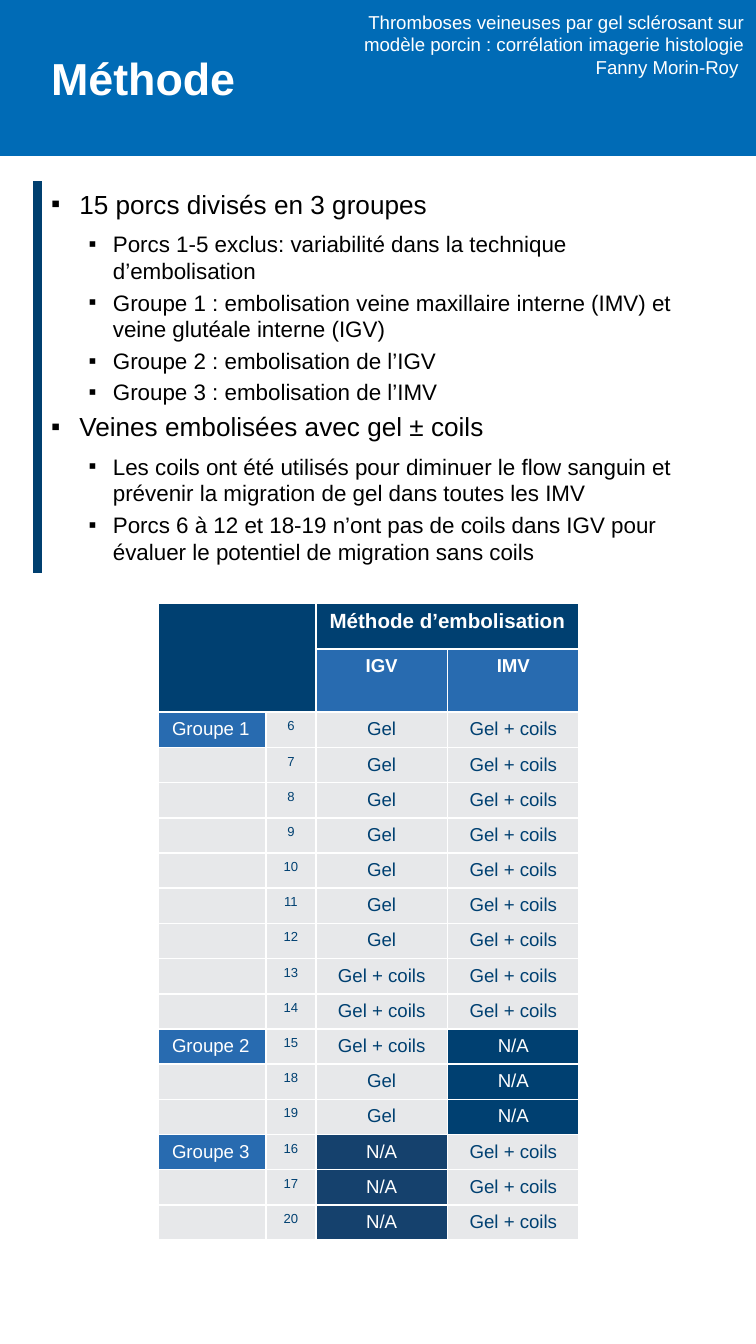
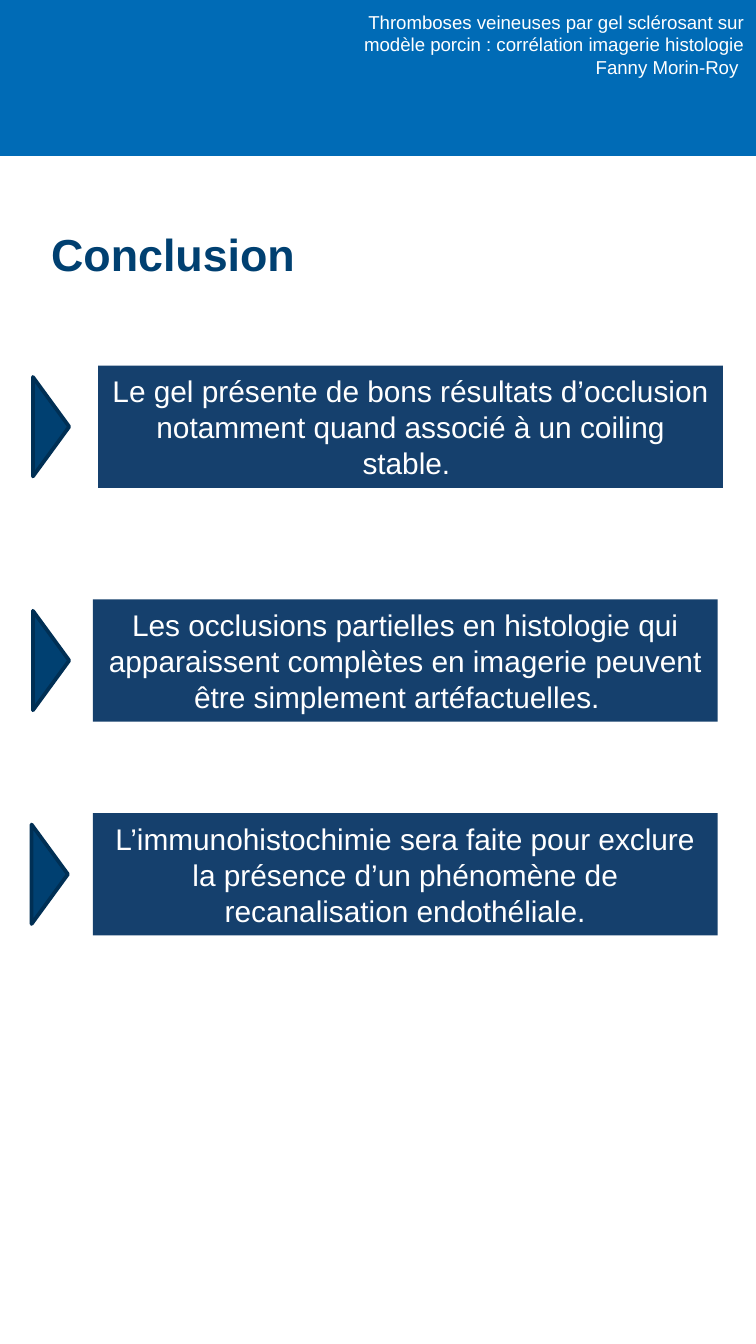
from pptx import Presentation
from pptx.dml.color import RGBColor as Rgb
from pptx.enum.shapes import MSO_CONNECTOR as Conn, MSO_SHAPE as Shape
from pptx.enum.text import MSO_ANCHOR as Anchor, MSO_AUTO_SIZE as Fit, PP_ALIGN as Align
from pptx.oxml import parse_xml
from pptx.oxml.ns import nsdecls
from pptx.util import Inches, Pt
from lxml.etree import SubElement

HEX = {
    "white": "FFFFFF", "black": "000000", "band": "006BB6", "navy": "004071",
    "rule": "003F6F", "edge": "002F54", "box": "15406D", "none": "15416D",
    "blue": "286BB0", "grey": "E7E8EA",
}
FONT = "Arial"
HIGH = 10
WIDE = HIGH * 9 / 16

HEAD = [
    "Thromboses veineuses par gel sclérosant sur modèle porcin : corrélation imagerie histologie",
    "Fanny Morin-Roy ",
]
POINTS = [
    (0, "15 porcs divisés en 3 groupes"),
    (1, "Porcs 1-5 exclus: variabilité dans la technique d’embolisation"),
    (1, "Groupe 1 : embolisation veine maxillaire interne (IMV) et veine glutéale interne (IGV)"),
    (1, "Groupe 2 : embolisation de l’IGV"),
    (1, "Groupe 3 : embolisation de l’IMV"),
    (0, "Veines embolisées avec gel ± coils"),
    (1, "Les coils ont été utilisés pour diminuer le flow sanguin et prévenir la migration de gel dans toutes les IMV"),
    (1, "Porcs 6 à 12 et 18-19 n’ont pas de coils dans IGV pour évaluer le potentiel de migration sans coils"),
]
LEVELS = [
    {"size": 14, "left": 0.21, "hang": -0.21, "after": 3.4},
    {"size": 12, "left": 0.46, "hang": -0.18, "after": 0},
]
GEL, BOTH, NA = "Gel", "Gel + coils", "N/A"
PIGS = [
    ("Groupe 1", range(6, 13), GEL, BOTH),
    ("", (13, 14), BOTH, BOTH),
    ("Groupe 2", (15,), BOTH, NA),
    ("", (18, 19), GEL, NA),
    ("Groupe 3", (16, 17, 20), NA, BOTH),
]
COLS = [0.8, 0.37, 0.98, 0.98]
TOPS = [0.34, 0.47]
ROWS = 3.93
CLAIMS = [
    (0.73, 2.72, 0.01, "Le gel présente de bons résultats d’occlusion notamment quand associé à un coiling stable. "),
    (0.69, 4.46, 0.01, "Les occlusions partielles en histologie qui apparaissent complètes en imagerie peuvent être simplement artéfactuelles.  "),
    (0.69, 6.05, 0, "L’immunohistochimie sera faite pour exclure la présence d’un phénomène de recanalisation endothéliale."),
]
CLAIM = (4.65, 0.91)
ARROW = (0.74, 0.27)


def tint(name):
    return Rgb.from_string(HEX[name])


def place(part, *box):
    for key, val in zip(("left", "top", "width", "height"), box):
        setattr(part, key, Inches(val))


def write(par, text, size, color, bold=False, align=Align.LEFT):
    par.alignment = align
    run = par.add_run()
    run.text = text
    for key, val in {"name": FONT, "size": Pt(size), "bold": bold}.items():
        setattr(run.font, key, val)
    run.font.color.rgb = tint(color)


def setup(frame, anchor=Anchor.TOP, fit=Fit.NONE):
    form = {"word_wrap": True, "auto_size": fit, "vertical_anchor": anchor}
    for key, val in form.items():
        setattr(frame, key, val)
    return frame


def block(slide, kind, box, fill, edge=None):
    part = slide.shapes.add_shape(kind, *map(Inches, box))
    part.shadow.inherit = False
    part.fill.solid()
    part.fill.fore_color.rgb = tint(fill)
    if edge:
        part.line.color.rgb = tint(edge)
        part.line.width = Pt(2)
    else:
        part.line.fill.background()
    return part


def start(deck, layout, title, color, box):
    slide = deck.slides.add_slide(deck.slide_layouts[layout])
    name = slide.shapes.title
    place(name, *box)
    write(setup(name.text_frame).paragraphs[0], title, 24, color, True)
    return slide


def header(slide):
    box = slide.shapes.add_textbox(*map(Inches, (2.58, 0.03, 3.05, 0.65)))
    frame = setup(box.text_frame)
    for i, text in enumerate(HEAD):
        par = frame.add_paragraph() if i else frame.paragraphs[0]
        write(par, text, 10, "white", align=Align.RIGHT)


def bullets(body):
    place(body, 0.28, 1.35, 5.06, 3.03)
    frame = setup(body.text_frame)
    for i, (level, text) in enumerate(POINTS):
        par = frame.add_paragraph() if i else frame.paragraphs[0]
        form = LEVELS[level]
        par.level = level
        props = par._p.get_or_add_pPr()
        props.set("marL", str(Inches(form["left"])))
        props.set("indent", str(Inches(form["hang"])))
        props.append(parse_xml(f'<a:buChar {nsdecls("a")} char="▪"/>'))
        par.space_before = Pt(form["size"] * 0.2 if i else 0)
        par.space_after = Pt(form["after"])
        write(par, text, form["size"], "black")


def cell_set(cell, fill, text="", size=10, color="navy", bold=False, align=Align.CENTER):
    cell.fill.solid()
    cell.fill.fore_color.rgb = tint(fill)
    cell.margin_bottom = Inches(0.04)
    props = cell._tc.get_or_add_tcPr()
    for i, side in enumerate("LRTB"):
        props.insert(i, parse_xml(
            f'<a:ln{side} {nsdecls("a")} w="12700"><a:solidFill>'
            f'<a:srgbClr val="{HEX["white"]}"/></a:solidFill></a:ln{side}>'))
    par = cell.text_frame.paragraphs[0]
    if text:
        write(par, text, size, color, bold, align)
    else:
        par._p.append(parse_xml(f'<a:endParaRPr {nsdecls("a")} sz="{size * 100}"/>'))


def grid(slide):
    rows = [(name if i == 0 else "", str(pig), igv, imv)
            for name, pigs, igv, imv in PIGS for i, pig in enumerate(pigs)]
    highs = TOPS + [ROWS / len(rows)] * len(rows)
    box = (1.18, 4.49, sum(COLS), sum(highs))
    table = slide.shapes.add_table(len(highs), len(COLS), *map(Inches, box)).table
    table.first_row = table.horz_banding = False
    for col, wide in zip(table.columns, COLS):
        col.width = Inches(wide)
    for row, high in zip(table.rows, highs):
        row.height = Inches(high)
    tops = [["", "", "Méthode d’embolisation", ""], ["", "", "IGV", "IMV"]]
    for r, line in enumerate(tops):
        for c, text in enumerate(line):
            fill = "blue" if r and c > 1 else "navy"
            cell_set(table.cell(r, c), fill, text, 10 if r else 11, "white", True)
    table.cell(0, 0).merge(table.cell(1, 1))
    table.cell(0, 2).merge(table.cell(0, 3))
    for r, (name, pig, *veins) in enumerate(rows, len(TOPS)):
        cell_set(table.cell(r, 0), "blue" if name else "grey", name, 10, "white", align=Align.LEFT)
        cell_set(table.cell(r, 1), "grey", pig, 7)
        for c, (text, dark) in enumerate(zip(veins, ("none", "navy")), 2):
            void = text == NA
            cell_set(table.cell(r, c), dark if void else "grey", text, 10, "white" if void else "navy")


def rule(slide):
    line = slide.shapes.add_connector(Conn.STRAIGHT, *map(Inches, (0.28, 1.35, 0.28, 4.26)))
    line.line.color.rgb = tint("rule")
    line.line.width = Pt(4.5)
    SubElement(line._element.spPr, "{http://schemas.openxmlformats.org/drawingml/2006/main}effectLst")


def claims(slide):
    for left, top, tip, text in CLAIMS:
        mid = top + (CLAIM[1] - ARROW[1]) / 2
        arrow = block(slide, Shape.ISOSCELES_TRIANGLE, (tip, mid, *ARROW), "navy", "edge")
        arrow.rotation = 90
        box = block(slide, Shape.RECTANGLE, (left, top, *CLAIM), "box")
        frame = setup(box.text_frame, Anchor.MIDDLE, Fit.SHAPE_TO_FIT_TEXT)
        write(frame.paragraphs[0], text, 16, "white", align=Align.CENTER)


def main():
    deck = Presentation()
    deck.slide_width, deck.slide_height = Inches(WIDE), Inches(HIGH)

    method = start(deck, 1, "Méthode", "white", (0.28, 0.33, 4.93, 0.58))
    band = block(method, Shape.RECTANGLE, (0, 0, WIDE, 1.16), "band")
    deck.slide_master.element.cSld.spTree.insert(2, band._element)
    bullets(method.placeholders[1])
    grid(method)
    rule(method)
    header(method)

    close = start(deck, 5, "Conclusion", "navy", (0.28, 1.64, 5.06, 1.41))
    claims(close)
    header(close)
    deck.save("out.pptx")


if __name__ == "__main__":
    main()
